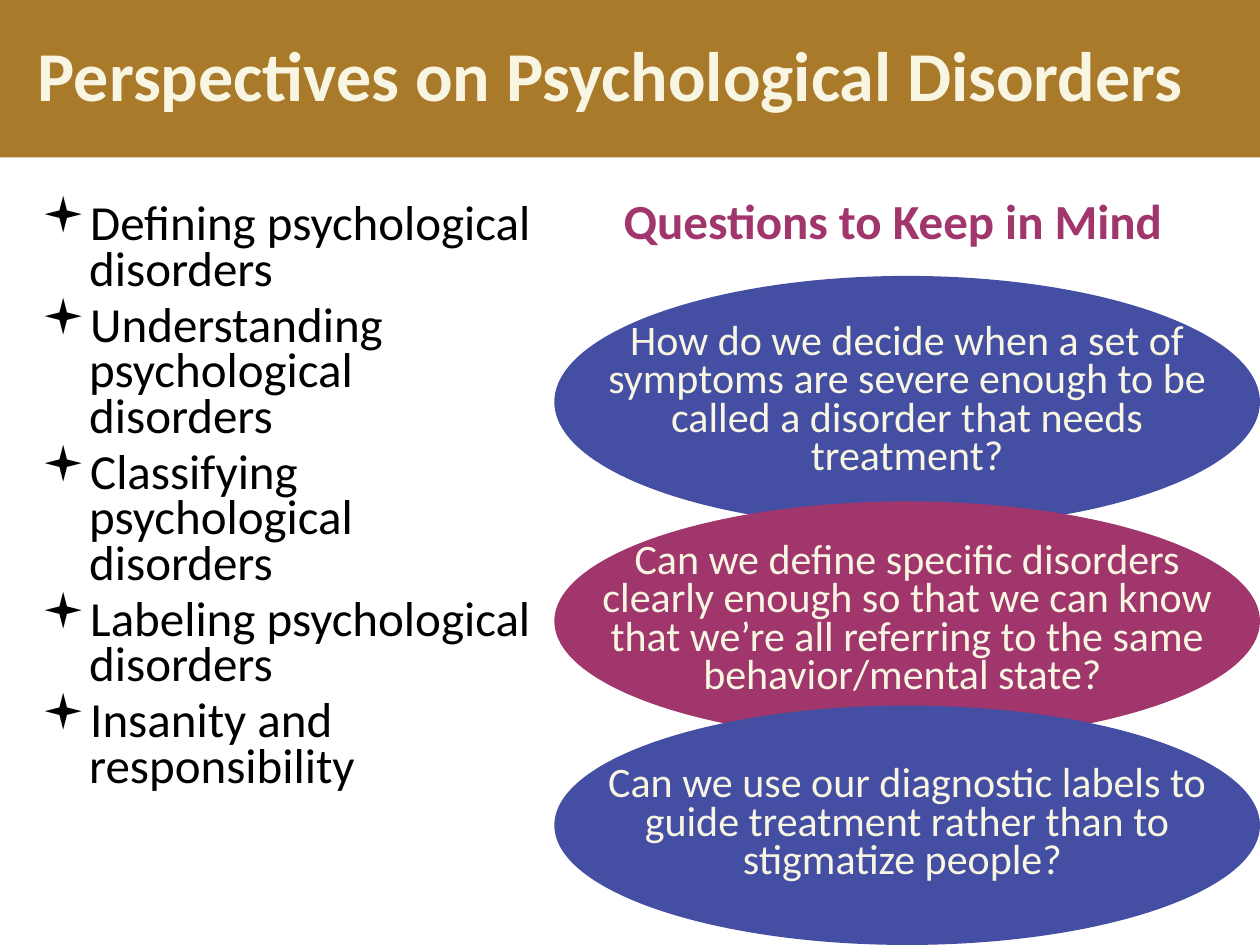
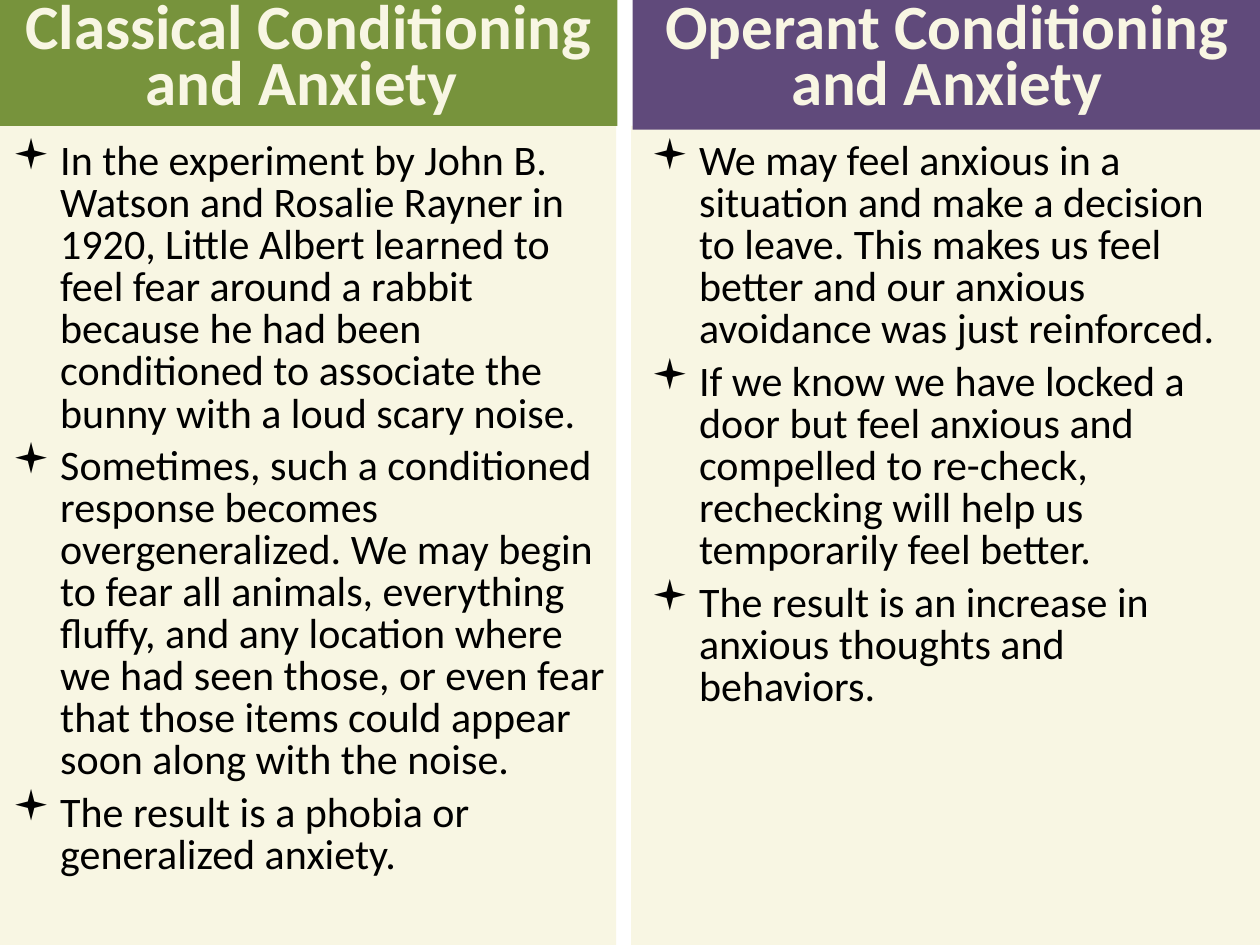
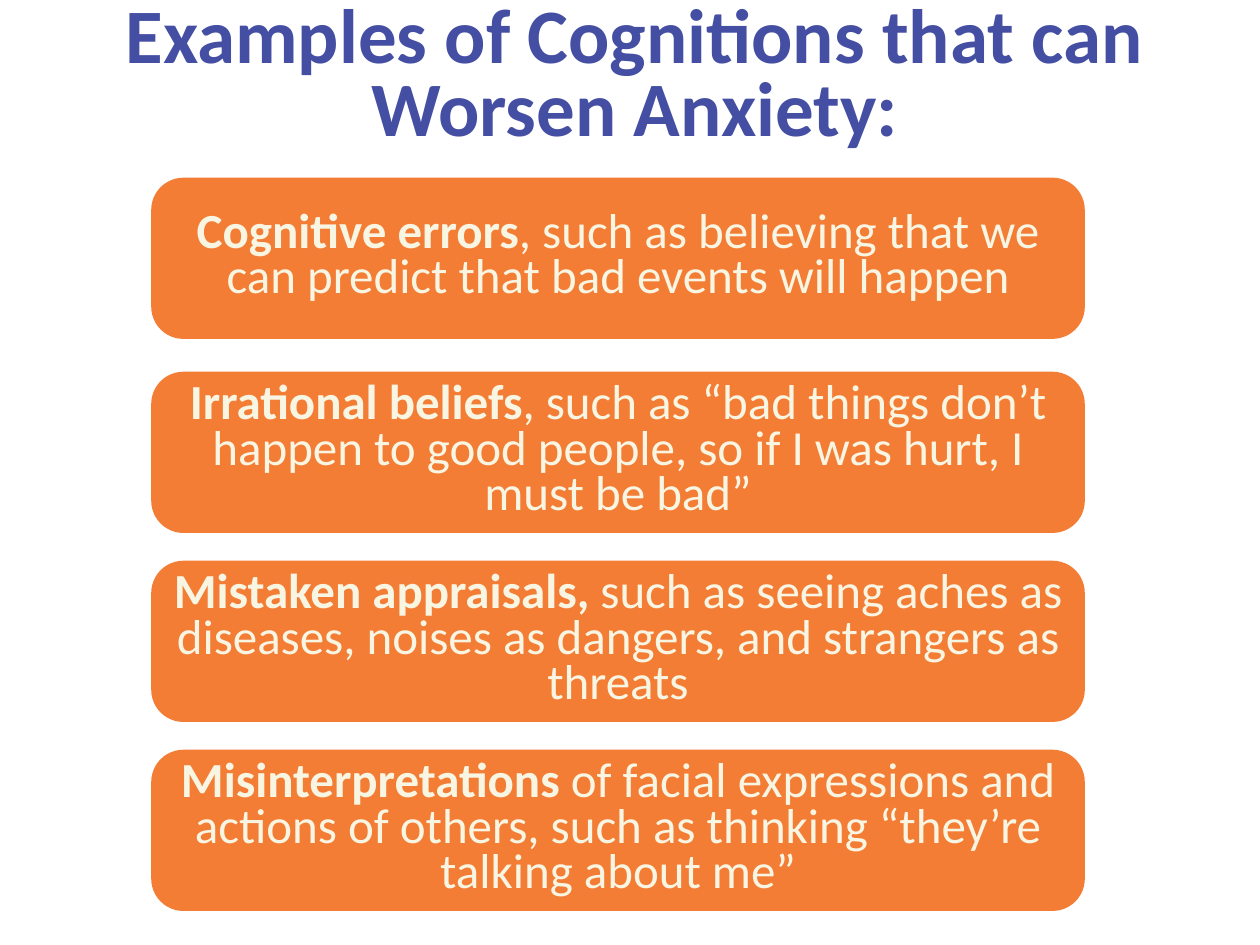
import pptx
import pptx.dml.color
import pptx.enum.shapes
import pptx.enum.text
import pptx.oxml.ns
import pptx.util
from lxml import etree

Inches = pptx.util.Inches
Pt = pptx.util.Pt
qn = pptx.oxml.ns.qn
ALIGN = pptx.enum.text.PP_ALIGN
ANCHOR = pptx.enum.text.MSO_ANCHOR
SHAPE = pptx.enum.shapes.MSO_SHAPE

THEME = {
    "font": "Calibri", "bullet_font": "Wingdings",
    "cream": "F8F6E3", "black": "000000", "ochre": "AA7A2B", "indigo": "444EA2",
    "plum": "A0366C", "violet": "604A7B", "green": "77933C", "orange": "F36F21",
    # Type styles: size and line pitch in points
    "banner": {"size": 40, "pitch": 42, "bold": True},
    "headline": {"size": 44, "pitch": 42, "bold": True},
    "column_title": {"size": 36, "pitch": 32, "bold": True},
    "large": {"size": 28, "pitch": 26, "bold": False},
    "heading": {"size": 28, "pitch": 26, "bold": True},
    "question": {"size": 24, "pitch": 22, "bold": False},
    "body": {"size": 24, "pitch": 24, "bold": False},
}


def write_text(shape, paragraphs, style, color, align=ALIGN.CENTER, anchor=ANCHOR.TOP,
               insets=(0.1, 0.05, 0.1, 0.05), bullet=False):
    """Fill a shape; each paragraph is a list of (text, bold) runs or a plain string."""
    frame = shape.text_frame
    frame_format = {"word_wrap": True, "vertical_anchor": anchor,
                    "auto_size": pptx.enum.text.MSO_AUTO_SIZE.NONE}
    for side, inset in zip(("left", "top", "right", "bottom"), insets):
        frame_format["margin_" + side] = Inches(inset)
    for name, value in frame_format.items():
        setattr(frame, name, value)

    look = THEME[style]
    for index, content in enumerate(paragraphs):
        paragraph = frame.add_paragraph() if index else frame.paragraphs[0]
        paragraph_format = {"alignment": align, "line_spacing": Pt(look["pitch"]),
                            "space_before": Pt(0), "space_after": Pt(6 if bullet else 0)}
        for name, value in paragraph_format.items():
            setattr(paragraph, name, value)
        if bullet:
            properties = paragraph._p.get_or_add_pPr()
            properties.set("marL", str(Inches(0.38)))
            properties.set("indent", str(Inches(-0.38)))
            etree.SubElement(properties, qn("a:buFont"), typeface=THEME["bullet_font"])
            etree.SubElement(properties, qn("a:buChar"), char="▪")
        runs = [(content, look["bold"])] if isinstance(content, str) else content
        for text, bold in runs:
            run = paragraph.add_run()
            run.text = text
            font_format = {"name": THEME["font"], "size": Pt(look["size"]), "bold": bold}
            for name, value in font_format.items():
                setattr(run.font, name, value)
            run.font.color.rgb = pptx.dml.color.RGBColor.from_string(THEME[color])


def paint(shape, color, opacity=100):
    """Give a shape a flat fill with no outline or shadow."""
    shape.shadow.inherit = False
    shape.line.fill.background()
    shape.fill.solid()
    shape.fill.fore_color.rgb = pptx.dml.color.RGBColor.from_string(THEME[color])
    if opacity < 100:
        rgb = shape._element.spPr.find(".//" + qn("a:srgbClr"))
        etree.SubElement(rgb, qn("a:alpha"), val=str(opacity * 1000))


presentation = pptx.Presentation()
presentation.slide_width = Inches(10)
presentation.slide_height = Inches(7.5)
title_only, blank = presentation.slide_layouts[5], presentation.slide_layouts[6]

# Titled slides: overview and cognitions
overview = presentation.slides.add_slide(title_only)
conditioning = presentation.slides.add_slide(blank)
cognitions = presentation.slides.add_slide(title_only)

titles = [
    (overview, (0, 0, 10, 1.25), "Perspectives on Psychological Disorders",
     "banner", "cream", ALIGN.LEFT, 0.3),
    (cognitions, (0.54, 0.11, 9, 1.03), "Examples of Cognitions that can Worsen Anxiety:",
     "headline", "indigo", ALIGN.CENTER, 0.1),
]
for slide, box, text, style, color, align, left_inset in titles:
    title = slide.shapes.title
    for name, value in zip(("left", "top", "width", "height"), box):
        setattr(title, name, Inches(value))
    write_text(title, [text], style, color, align, ANCHOR.MIDDLE,
               (left_inset, 0.05, 0.1, 0.05))
paint(overview.shapes.title, "ochre")

# Overview: topic list
topics = overview.shapes.add_textbox(Inches(0.23), Inches(1.58), Inches(4.11), Inches(5.36))
write_text(topics, [
    "Defining psychological disorders",
    "Understanding psychological disorders",
    "Classifying psychological disorders",
    "Labeling psychological disorders",
    "Insanity and responsibility",
], "large", "black", ALIGN.LEFT, bullet=True)

# Overview: question ellipses, drawn as four curves so that text can use their full width
questions = [
    (2.19, 2.0, "indigo", "How do we decide when a set of symptoms are severe enough "
     "to be called a disorder that needs treatment?"),
    (3.98, 1.9, "plum", "Can we define specific disorders clearly enough so that we can "
     "know that we’re all referring to the same behavior/mental state? "),
    (5.6, 1.9, "indigo", "Can we use our diagnostic labels to guide treatment rather "
     "than to stigmatize people? "),
]
ellipse_left, ellipse_width = 4.4, 5.6
bend = 0.55  # control-point distance for a quarter circle of radius 1
quarter = [(-1, -bend), (-bend, -1), (0, -1)]
unit_curve = [(-1, 0)]
for turn in range(4):
    unit_curve += quarter
    quarter = [(-y, x) for x, y in quarter]

for top, height, color, text in questions:
    outline = [(Inches(ellipse_left + ellipse_width / 2 * (1 + x)),
                Inches(top + height / 2 * (1 + y))) for x, y in unit_curve]
    builder = overview.shapes.build_freeform(*outline[0])
    builder.add_line_segments(outline[1:], close=True)
    ellipse = builder.convert_to_shape()
    segments = list(ellipse._element.iter(qn("a:lnTo")))
    for first in range(0, 12, 3):
        curve = etree.Element(qn("a:cubicBezTo"))
        segments[first].addprevious(curve)
        for segment in segments[first:first + 3]:
            curve.append(segment[0])
            segment.getparent().remove(segment)
    paint(ellipse, color)
    write_text(ellipse, [text], "question", "cream", anchor=ANCHOR.MIDDLE, insets=(0.3,) * 4)

heading = overview.shapes.add_textbox(Inches(4.55), Inches(1.57), Inches(5.16), Inches(0.47))
write_text(heading, ["Questions to Keep in Mind "], "heading", "plum")

# Conditioning: two columns, each with a panel, a header and a list
columns = [
    {"panel": (5.01, 4.99), "header": (5.02, 4.99, 1.03), "list": (5.07, 4.89, 4.64),
     "color": "violet", "title": "Operant Conditioning and Anxiety", "points": [
         "We may feel anxious in a situation and make a decision to leave. This makes us "
         "feel better and our anxious avoidance was just reinforced.",
         "If we know we have locked a door but feel anxious and compelled to re-check, "
         "rechecking will help us temporarily feel better.",
         "The result is an increase in anxious thoughts and behaviors."]},
    {"panel": (-0.01, 4.9), "header": (0, 4.9, 1), "list": (0, 4.94, 5.99),
     "color": "green", "title": "Classical Conditioning and Anxiety ", "points": [
         "In the experiment by John B. Watson and Rosalie Rayner in 1920, Little Albert "
         "learned to feel fear around a rabbit because he had been conditioned to "
         "associate the bunny with a loud scary noise.",
         "Sometimes, such a conditioned response becomes overgeneralized. We may begin to "
         "fear all animals, everything fluffy, and any location where we had seen those, "
         "or even fear that those items could appear soon along with the noise.",
         "The result is a phobia or generalized anxiety."]},
]
for column in columns:
    left, width = column["panel"]
    panel = conditioning.shapes.add_shape(
        SHAPE.RECTANGLE, Inches(left), Inches(1), Inches(width), Inches(6.5))
    paint(panel, "cream")

    left, width, height = column["header"]
    header = conditioning.shapes.add_shape(
        SHAPE.RECTANGLE, Inches(left), Inches(0), Inches(width), Inches(height))
    paint(header, column["color"])
    write_text(header, [column["title"]], "column_title", "cream")

    left, width, height = column["list"]
    points = conditioning.shapes.add_textbox(
        Inches(left), Inches(1.08), Inches(width), Inches(height))
    write_text(points, column["points"], "body", "black", ALIGN.LEFT, bullet=True)

# Cognitions: stacked rounded cards
cards = [
    (1.41, "Cognitive errors",
     ", such as believing that we can predict that bad events will happen"),
    (2.95, "Irrational beliefs",
     ", such as “bad things don’t happen to good people, so if I was hurt, I must be bad”"),
    (4.45, "Mistaken appraisals,",
     " such as seeing aches as diseases, noises as dangers, and strangers as threats"),
    (5.95, "Misinterpretations",
     " of facial expressions and actions of others, such as thinking "
     "“they’re talking about me”"),
]
for top, term, example in cards:
    card = cognitions.shapes.add_shape(
        SHAPE.ROUNDED_RECTANGLE, Inches(1.2), Inches(top), Inches(7.41), Inches(1.28))
    card.adjustments[0] = 0.2
    paint(card, "orange", opacity=90)
    write_text(card, [[(term, True), (example, False)]], "large", "cream",
               anchor=ANCHOR.MIDDLE, insets=(0.04,) * 4)

presentation.save("out.pptx")
